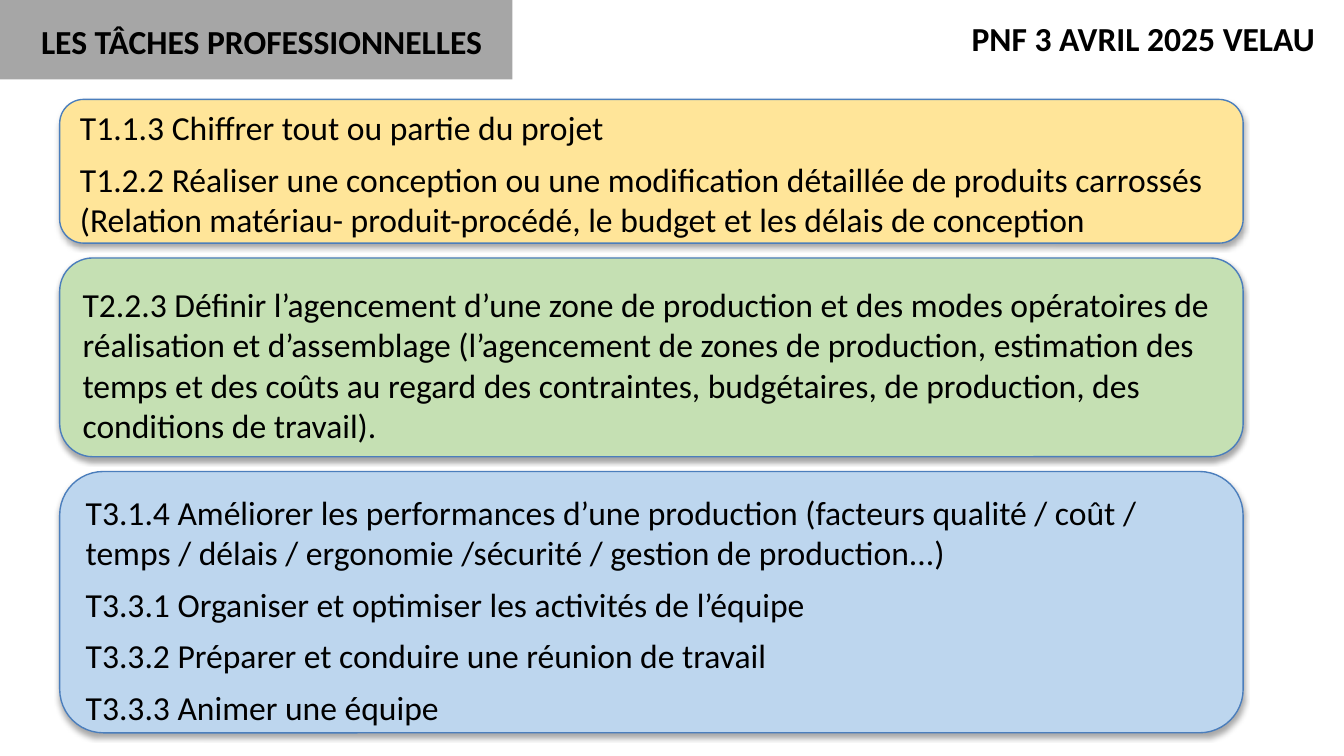
import pptx
import pptx.dml.color
import pptx.enum.shapes
import pptx.enum.text
import pptx.oxml
import pptx.oxml.ns
import pptx.util

Pt = pptx.util.Pt
Shapes = pptx.enum.shapes.MSO_SHAPE
Align = pptx.enum.text.PP_ALIGN

# Content
TITLE = "LES TÂCHES PROFESSIONNELLES"
EVENT = "PNF 3 AVRIL 2025 VELAU"
PANELS = [
    {"fill": "FFE599", "height": 77, "inset": 0.3, "tasks": [
        "T1.1.3 Chiffrer tout ou partie du projet",
        "T1.2.2 Réaliser une conception ou une modification détaillée de produits "
        "carrossés (Relation matériau- produit-procédé, le budget et les délais de "
        "conception",
    ]},
    {"fill": "C5E0B3", "height": 106.5, "inset": 8.8, "tasks": [
        "T2.2.3 Définir l’agencement d’une zone de production et des modes "
        "opératoires de réalisation et d’assemblage (l’agencement de zones de "
        "production, estimation des temps et des coûts au regard des contraintes, "
        "budgétaires, de production, des conditions de travail).",
    ]},
    {"fill": "BDD6EE", "height": 140, "inset": 4.1, "tasks": [
        "T3.1.4 Améliorer les performances d’une production (facteurs qualité / "
        "coût / temps / délais / ergonomie /sécurité / gestion de production...)",
        "T3.3.1 Organiser et optimiser les activités de l’équipe",
        "T3.3.2 Préparer et conduire une réunion de travail",
        "T3.3.3 Animer une équipe",
    ]},
]
PANEL_LEFT, PANEL_TOP, PANEL_WIDTH, PANEL_GAP = 32, 53.3, 634, 7.9


def color(value):
    return pptx.dml.color.RGBColor.from_string(value)


def add_panel(page, kind, left, top, width, height, fill, line=None):
    panel = page.shapes.add_shape(kind, Pt(left), Pt(top), Pt(width), Pt(height))
    panel.shadow.inherit = False
    panel.fill.solid()
    panel.fill.fore_color.rgb = color(fill)
    if line:
        panel.line.color.rgb = color(line)
        panel.line.width = Pt(0.75)
    else:
        panel.line.fill.background()
    return panel


def add_shadow(panel):
    effects = panel._element.spPr.find(pptx.oxml.ns.qn("a:effectLst"))
    effects.append(pptx.oxml.parse_xml(
        f'<a:outerShdw {pptx.oxml.ns.nsdecls("a")} blurRad="{Pt(3.1)}" '
        f'dist="{Pt(1.8)}" dir="5400000" rotWithShape="0">'
        '<a:srgbClr val="000000"><a:alpha val="35000"/></a:srgbClr>'
        '</a:outerShdw>'))


def write(box, texts, bold=False, align=Align.LEFT, top=3.6, bottom=3.6):
    frame = box.text_frame
    frame.word_wrap = True
    frame.vertical_anchor = pptx.enum.text.MSO_ANCHOR.TOP
    frame.margin_top, frame.margin_bottom = Pt(top), Pt(bottom)
    for index, text in enumerate(texts):
        para = frame.add_paragraph() if index else frame.paragraphs[0]
        para.alignment = align
        if index:
            para.space_before = Pt(6)
        span = para.add_run()
        span.text = text
        span.font.name = "Calibri"
        span.font.size = Pt(18)
        span.font.bold = bold
        span.font.color.rgb = color("000000")


deck = pptx.Presentation()
deck.slide_width, deck.slide_height = Pt(720), Pt(405)
page = deck.slides.add_slide(deck.slide_layouts[6])

# Header band, event and title
add_panel(page, Shapes.RECTANGLE, 0, 0, 274.5, 42.5, "A6A6A6")
event = add_panel(page, Shapes.RECTANGLE, 513.4, 5.8, 206.6, 29, "FFFFFF")
write(event, [EVENT], bold=True)
title = page.shapes.add_textbox(Pt(-40.3), Pt(7.9), Pt(361), Pt(29))
write(title, [TITLE], bold=True, align=Align.CENTER)

# Stacked task panels
top = PANEL_TOP
for item in PANELS:
    panel = add_panel(page, Shapes.ROUNDED_RECTANGLE, PANEL_LEFT, top, PANEL_WIDTH,
                      item["height"], item["fill"], line="4B7EBC")
    add_shadow(panel)
    write(panel, item["tasks"], top=item["inset"], bottom=0)
    top += item["height"] + PANEL_GAP

deck.save("out.pptx")
